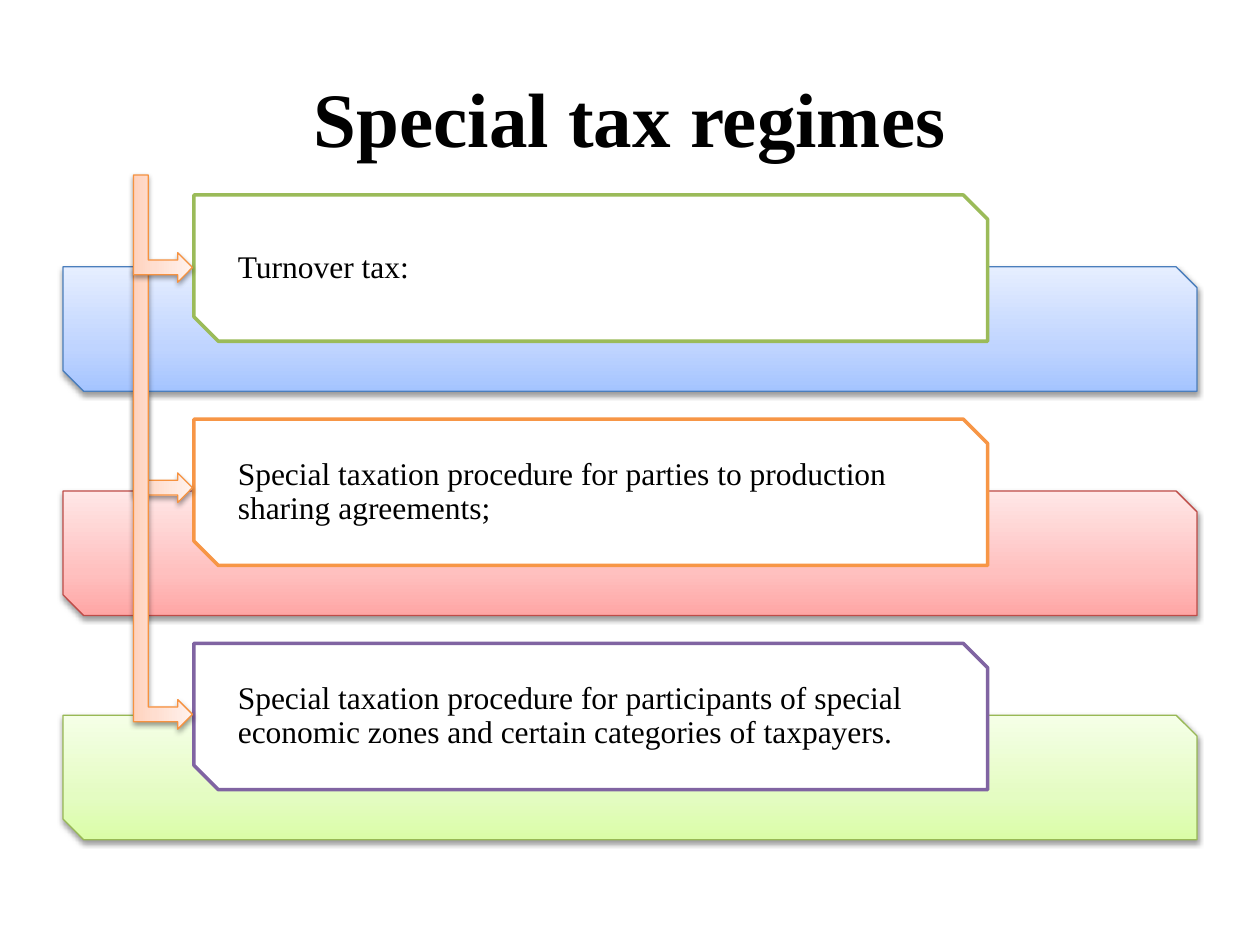
from copy import deepcopy

from lxml.etree import SubElement
from pptx import Presentation
from pptx.dml.color import RGBColor
from pptx.enum.shapes import MSO_SHAPE
from pptx.enum.text import MSO_ANCHOR, PP_ALIGN
from pptx.oxml.ns import qn
from pptx.util import Cm, Pt

TITLE = "Special tax regimes"
FONT = "Times New Roman"
BLACK = RGBColor(0x00, 0x00, 0x00)
WHITE = RGBColor(0xFF, 0xFF, 0xFF)

# Gradients run from the bottom colour to the top colour.
BLUE = [RGBColor(0xA4, 0xC4, 0xFF), RGBColor(0xBF, 0xD4, 0xFF), RGBColor(0xE6, 0xEE, 0xFF)]
RED = [RGBColor(0xFF, 0xA6, 0xA5), RGBColor(0xFF, 0xC0, 0xBF), RGBColor(0xFF, 0xE7, 0xE7)]
GREEN = [RGBColor(0xDA, 0xFD, 0xA7), RGBColor(0xE4, 0xFC, 0xC2), RGBColor(0xF5, 0xFF, 0xE7)]
PEACH = [RGBColor(0xFF, 0xD2, 0xBD), RGBColor(0xFF, 0xDE, 0xD0), RGBColor(0xFF, 0xF2, 0xED)]
STOP_POSITIONS = [0, 0.35, 1]
BLUE_LINE = RGBColor(0x4B, 0x7E, 0xBC)
RED_LINE = RGBColor(0xBF, 0x4C, 0x48)
GREEN_LINE = RGBColor(0x98, 0xB9, 0x55)
ARROW_LINE = RGBColor(0xF6, 0x92, 0x40)
GREEN_FRAME = RGBColor(0x9B, 0xBB, 0x59)
ORANGE_FRAME = RGBColor(0xF7, 0x96, 0x46)
PURPLE_FRAME = RGBColor(0x80, 0x64, 0xA2)

# text, bar gradient, bar line, box frame
REGIMES = [
    ("Turnover tax:", BLUE, BLUE_LINE, GREEN_FRAME),
    ("Special taxation procedure for parties to production sharing agreements;",
     RED, RED_LINE, ORANGE_FRAME),
    ("Special taxation procedure for participants of special economic zones "
     "and certain categories of taxpayers.", GREEN, GREEN_LINE, PURPLE_FRAME),
]
# top and bottom of each arrow, in cm, from back to front
ARROW_SPANS = [(7.98, 10.13), (5.38, 14.7), (3.53, 5.69)]
ARROW_LEFT, ARROW_WIDTH = 2.69, 1.19
ROW_PITCH = 4.52
BAR_TOP, BOX_TOP = 5.38, 3.93


def style_raised(shape, colors, line_color):
    """Give the shape a three-stop gradient, a thin line and a soft shadow below."""
    shape.fill.gradient()
    shape.fill.gradient_angle = 90
    stop_list = shape._element.spPr.find(qn("a:gradFill")).find(qn("a:gsLst"))
    stop_list.append(deepcopy(stop_list[0]))
    for stop, color, position in zip(shape.fill.gradient_stops, colors, STOP_POSITIONS):
        stop.color.rgb = color
        stop.position = position
    shape.line.color.rgb = line_color
    shape.line.width = Pt(0.75)

    shape.shadow.inherit = False
    effects = shape._element.spPr.find(qn("a:effectLst"))
    shadow = SubElement(effects, qn("a:outerShdw"), blurRad=str(Pt(3.1)),
                        dist=str(Pt(1.6)), dir="5400000", rotWithShape="0")
    color = SubElement(shadow, qn("a:srgbClr"), val="000000")
    SubElement(color, qn("a:alpha"), val="38000")


def add_box(shapes, top, text, frame_color):
    box = shapes.add_shape(MSO_SHAPE.SNIP_2_DIAG_RECTANGLE,
                           Cm(3.91), Cm(top), Cm(16), Cm(2.95))
    box.shadow.inherit = False
    box.fill.solid()
    box.fill.fore_color.rgb = WHITE
    box.line.color.rgb = frame_color
    box.line.width = Pt(2)
    frame = box.text_frame
    frame.text = text
    frame.word_wrap = True
    frame.vertical_anchor = MSO_ANCHOR.MIDDLE
    frame.margin_left = frame.margin_right = Cm(0.64)
    frame.margin_top = frame.margin_bottom = Cm(0.03)
    paragraph = frame.paragraphs[0]
    paragraph.alignment = PP_ALIGN.LEFT
    paragraph.line_spacing = 0.9
    format_run(paragraph.runs[0], 18)


def add_arrow(shapes, top, bottom):
    """Place an arrow that goes down and turns right: a bent-up arrow, rotated."""
    length = bottom - top
    left = ARROW_LEFT + (ARROW_WIDTH - length) / 2
    arrow = shapes.add_shape(MSO_SHAPE.BENT_UP_ARROW, Cm(left),
                             Cm((top + bottom - ARROW_WIDTH) / 2),
                             Cm(length), Cm(ARROW_WIDTH))
    arrow.rotation = 90
    style_raised(arrow, PEACH, ARROW_LINE)


def format_run(run, size, bold=False):
    run.font.name = FONT
    run.font.size = Pt(size)
    run.font.bold = bold
    run.font.color.rgb = BLACK


def main():
    presentation = Presentation()
    presentation.slide_width, presentation.slide_height = Cm(25.4), Cm(19.05)
    slide = presentation.slides.add_slide(presentation.slide_layouts[5])

    title = slide.shapes.title
    title.left, title.top, title.width, title.height = Cm(1.27), Cm(0.76), Cm(22.86), Cm(3.18)
    title.text_frame.text = TITLE
    title.text_frame.vertical_anchor = MSO_ANCHOR.MIDDLE
    title_paragraph = title.text_frame.paragraphs[0]
    title_paragraph.alignment = PP_ALIGN.CENTER
    format_run(title_paragraph.runs[0], 44, bold=True)

    diagram = slide.shapes.add_group_shape()
    for row, (text, gradient, line_color, frame_color) in enumerate(REGIMES):
        offset = row * ROW_PITCH
        bar = diagram.shapes.add_shape(MSO_SHAPE.SNIP_2_DIAG_RECTANGLE, Cm(1.27),
                                       Cm(BAR_TOP + offset), Cm(22.86), Cm(2.51))
        style_raised(bar, gradient, line_color)
        add_box(diagram.shapes, BOX_TOP + offset, text, frame_color)

    for top, bottom in ARROW_SPANS:
        add_arrow(slide.shapes, top, bottom)

    presentation.save("out.pptx")


if __name__ == "__main__":
    main()
